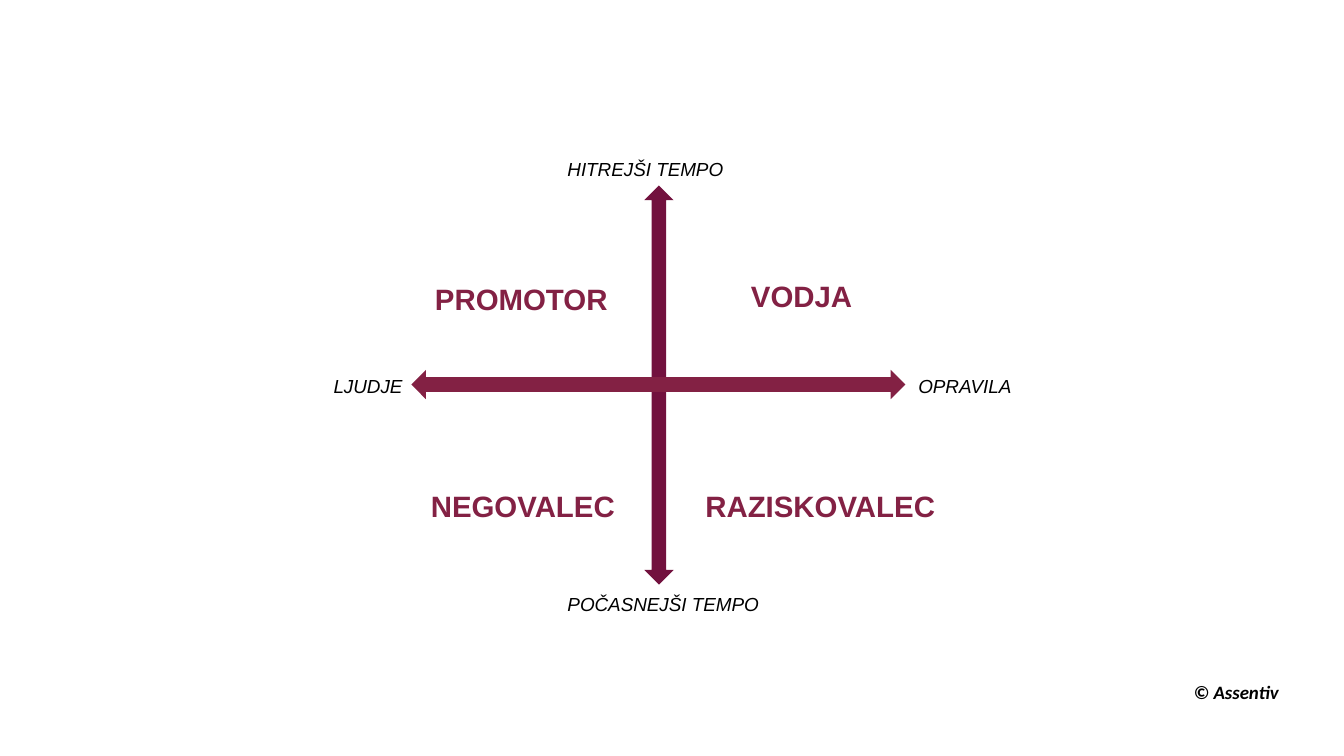
"""Builds a slide with four behaviour styles placed on a tempo axis and a people-to-tasks axis."""
from pptx import Presentation
from pptx.dml.color import RGBColor
from pptx.enum.shapes import MSO_SHAPE
from pptx.enum.text import MSO_AUTO_SIZE, PP_ALIGN
from pptx.util import Inches, Pt

VERTICAL = MSO_SHAPE.UP_DOWN_ARROW
HORIZONTAL = MSO_SHAPE.LEFT_RIGHT_ARROW
GROW = MSO_AUTO_SIZE.SHAPE_TO_FIT_TEXT
LEFT, CENTER = PP_ALIGN.LEFT, PP_ALIGN.CENTER
COLORS = {"tempo": "72113E", "style": "832144", "label": "000000"}

prs = Presentation()
prs.slide_width, prs.slide_height = Inches(13.33), Inches(7.5)
slide = prs.slides.add_slide(prs.slide_layouts[6])


def add_label(text, box, size, font, color, align, bold, italic):
    label = slide.shapes.add_textbox(*map(Inches, box))
    frame = label.text_frame
    frame.word_wrap = False
    frame.auto_size = GROW
    if align == CENTER:
        frame.margin_left = frame.margin_right = Inches(0.07)
        frame.margin_top = frame.margin_bottom = Inches(0.04)
    paragraph = frame.paragraphs[0]
    paragraph.alignment = align
    run = paragraph.add_run()
    run.text = text
    run.font.name = font
    run.font.size = Pt(size)
    run.font.bold = bold
    run.font.italic = italic
    run.font.color.rgb = RGBColor.from_string(COLORS[color])


axes = [
    (VERTICAL, (6.39, 1.84, 0.29, 3.96), "tempo"),
    (HORIZONTAL, (4.08, 3.67, 4.9, 0.29), "style"),
]
for arrow, box, color in axes:
    axis = slide.shapes.add_shape(arrow, *map(Inches, box))
    axis.shadow.inherit = False
    axis.fill.solid()
    axis.fill.fore_color.rgb = RGBColor.from_string(COLORS[color])
    axis.line.fill.background()

axis_ends = [
    ("HITREJŠI TEMPO", 5.53, 1.51, 1.77),
    ("POČASNEJŠI TEMPO", 5.53, 5.83, 2.12),
    ("OPRAVILA", 9.01, 3.67, 1.13),
    ("LJUDJE", 3.21, 3.67, 0.9),
]
for text, left, top, width in axis_ends:
    add_label(text, (left, top, width, 0.33), 13.5, "Arial", "label", LEFT, False, True)

styles = [
    ("PROMOTOR", 4.23, 2.75, 1.88),
    ("NEGOVALEC", 4.19, 4.8, 1.99),
    ("RAZISKOVALEC", 6.91, 4.8, 2.45),
    ("VODJA", 7.29, 2.72, 1.32),
]
for text, left, top, width in styles:
    add_label(text, (left, top, width, 0.43), 21, "Arial", "style", CENTER, True, False)

add_label("© Assentiv", (11.74, 6.7, 1.06, 0.33), 13.5, "Calibri", "label", LEFT, True, True)

prs.save("out.pptx")
